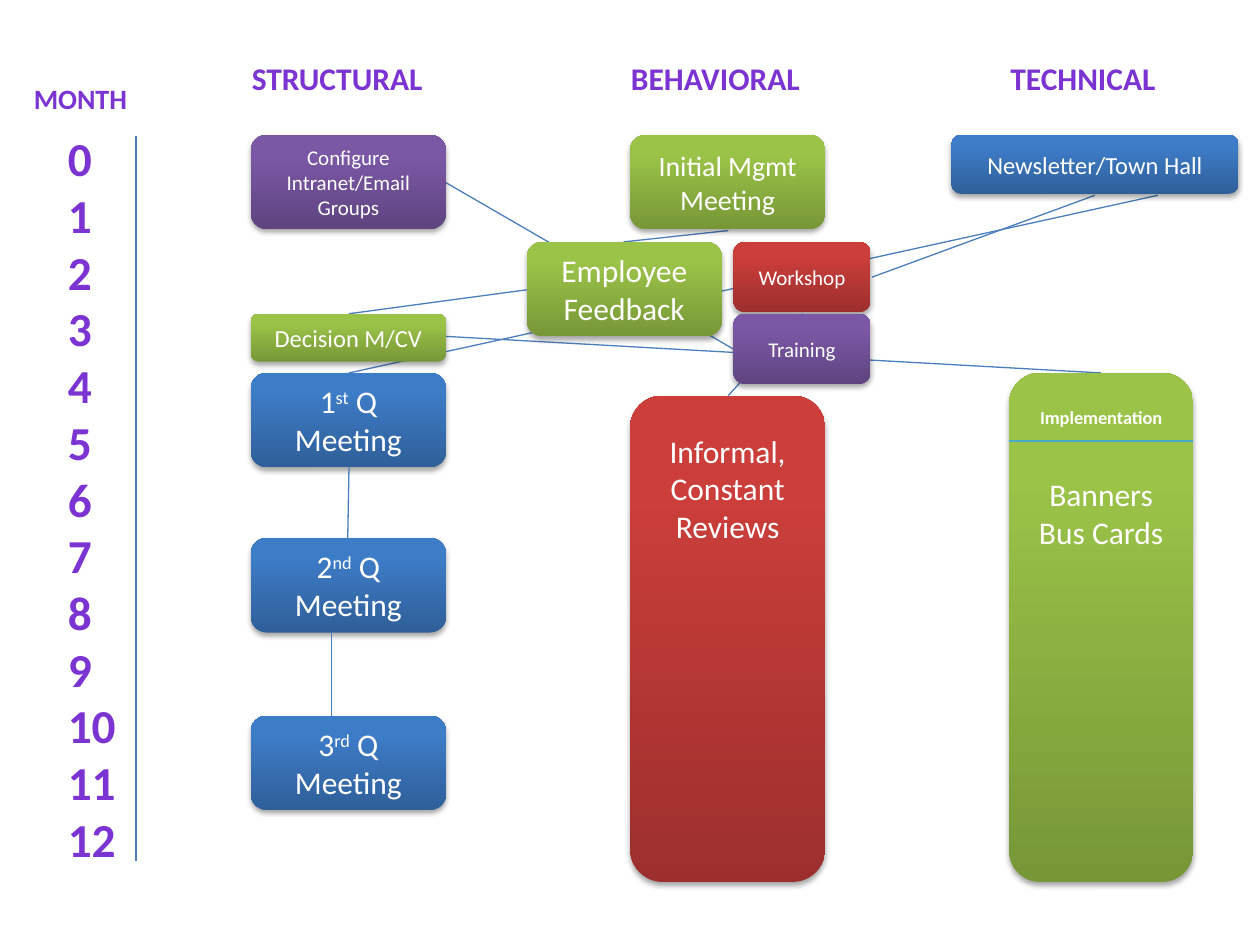
"""Build a month-by-month rollout timeline with three work streams."""
from dataclasses import dataclass
from typing import NamedTuple

from lxml import etree
from pptx import Presentation
from pptx.dml.color import RGBColor
from pptx.enum.shapes import MSO_CONNECTOR, MSO_SHAPE
from pptx.enum.text import MSO_ANCHOR, MSO_AUTO_SIZE, PP_ALIGN
from pptx.oxml import parse_xml
from pptx.oxml.ns import qn
from pptx.util import Inches, Pt

ROUNDED = MSO_SHAPE.ROUNDED_RECTANGLE
STRAIGHT = MSO_CONNECTOR.STRAIGHT
MIDDLE, TOP = MSO_ANCHOR.MIDDLE, MSO_ANCHOR.TOP
CENTER = PP_ALIGN.CENTER
FIT_SHAPE = MSO_AUTO_SIZE.SHAPE_TO_FIT_TEXT

FONT = "Calibri"
COLORS = {"label": "7B34D2", "text": "FFFFFF", "link": "4B7EBC", "divider": "46AAC5"}
GRADIENTS = {
    "purple": ("5F4480", "7B58A6"),
    "blue": ("2F5F99", "3D7CC7"),
    "green": ("779737", "9BC348"),
    "red": ("9C2F2D", "CB3E3A"),
}
SHADOW_XML = (
    '<a:outerShdw xmlns:a="http://schemas.openxmlformats.org/drawingml/2006/main" '
    'blurRad="40000" dist="23000" dir="5400000" rotWithShape="0">'
    '<a:srgbClr val="000000"><a:alpha val="35000"/></a:srgbClr></a:outerShdw>'
)

STRUCTURAL_X, BEHAVIORAL_X, TECHNICAL_X = 1.99, 5, 8.01
STEP_WIDTH, STEP_HEIGHT = 1.55, 0.75
QUARTER_TOP, QUARTER_PITCH = 2.96, 1.36


class Run(NamedTuple):
    text: str
    raised: bool = False


class Line(NamedTuple):
    runs: tuple[Run, ...]
    size: float
    bold: bool = False
    before: float = 0


@dataclass
class Step:
    left: float
    top: float
    color: str
    lines: list[Line]
    width: float = STEP_WIDTH
    height: float = STEP_HEIGHT
    top_margin: float | None = None


@dataclass
class Link:
    start: tuple[float, float]
    end: tuple[float, float]
    color: str = "link"
    weight: float = 0.75


@dataclass
class Label:
    left: float
    top: float
    width: float
    height: float
    lines: list[str]
    size: float
    pitch: float | None = None


def plain(text: str, size: float, bold: bool = False, before: float = 0) -> Line:
    """Return a line made of a single run."""
    return Line((Run(text),), size, bold, before)


def quarter(top: float, number: str, suffix: str) -> Step:
    """Return a quarterly meeting step with a raised ordinal suffix."""
    runs = (Run(number), Run(suffix, True), Run(" Q Meeting"))
    return Step(STRUCTURAL_X, top, "blue", [Line(runs, 18)])


LINKS = [
    Link((9.19, 1.55), (2.77, 2.96)),
    Link((3.54, 1.45), (5.82, 2.77)),
    Link((5.78, 1.83), (4.95, 1.92)),
    Link((4.18, 2.3), (2.77, 2.49)),
    Link((3.54, 2.67), (8.74, 2.96)),
    Link((8.69, 1.55), (6.92, 2.2)),
    Link((6.37, 2.49), (5.78, 3.14)),
    Link((1.08, 1.08), (1.08, 6.83), weight=1.5),
]
FRONT_LINKS = [
    Link((TECHNICAL_X, 3.5), (9.47, 3.5), "divider"),
    Link((2.77, 3.71), (2.76, 4.27)),
    Link((2.63, 5.02), (2.63, 5.68)),
]
LABELS = [
    Label(1.9, 0.42, 1.73, 0.4, ["STRUCTURAL"], 18),
    Label(4.91, 0.42, 1.73, 0.4, ["BEHAVIORAL"], 18),
    Label(7.92, 0.42, 1.55, 0.4, ["TECHNICAL"], 18),
    Label(0.17, 0.6, 1.28, 0.37, ["MONTH"], 16),
    Label(0.44, 0.98, 0.73, 6.23, [str(month) for month in range(13)], 27, 32.4),
]
STEPS = [
    Step(STRUCTURAL_X, 1.07, "purple", [plain("Configure Intranet/Email Groups", 12)]),
    quarter(QUARTER_TOP, "1", "st"),
    quarter(4.27, "2", "nd"),
    quarter(QUARTER_TOP + 2 * QUARTER_PITCH, "3", "rd"),
    Step(TECHNICAL_X, 2.96, "green",
         [plain("Implementation", 10.5, True), plain("Banners", 18, before=27), plain("Bus Cards", 18)],
         1.46, 4.04, 0.19),
    Step(BEHAVIORAL_X, 3.14, "red",
         [plain("Informal, Constant", 18), plain("Reviews", 18)], height=3.86, top_margin=0.21),
    Step(STRUCTURAL_X, 2.49, "green", [plain("Decision M/CV", 14)], height=0.38),
    Step(4.18, 1.92, "green", [plain("Employee Feedback", 18)]),
    Step(BEHAVIORAL_X, 1.07, "green", [plain("Initial Mgmt Meeting", 16)]),
    Step(7.55, 1.07, "blue", [plain("Newsletter/Town Hall", 14)], 2.28, 0.47),
    Step(5.82, 1.92, "red", [plain("Workshop", 12)], 1.09, 0.56),
    Step(5.82, 2.49, "purple", [plain("Training", 12)], 1.09, 0.56),
]


def add_run(paragraph, text: str, size: float, bold: bool, color: str, raised: bool = False) -> None:
    """Append one formatted run to a paragraph."""
    run = paragraph.add_run()
    run.text = text
    run.font.name, run.font.size, run.font.bold = FONT, Pt(size), bold
    run.font.color.rgb = RGBColor.from_string(COLORS[color])
    if raised:
        run._r.get_or_add_rPr().set("baseline", "30000")


def add_link(shapes, link: Link) -> None:
    """Draw a straight connector without a shadow."""
    connector = shapes.add_connector(STRAIGHT, *map(Inches, link.start + link.end))
    connector.line.color.rgb = RGBColor.from_string(COLORS[link.color])
    connector.line.width = Pt(link.weight)
    etree.SubElement(connector._element.spPr, qn("a:effectLst"))


def add_label(shapes, label: Label) -> None:
    """Draw a purple heading or the column of months."""
    bounds = (label.left, label.top, label.width, label.height)
    frame = shapes.add_textbox(*map(Inches, bounds)).text_frame
    frame.word_wrap, frame.auto_size = True, FIT_SHAPE
    for index, text in enumerate(label.lines):
        paragraph = frame.add_paragraph() if index else frame.paragraphs[0]
        if label.pitch:
            paragraph.line_spacing = Pt(label.pitch)
        add_run(paragraph, text, label.size, True, "label")


def add_step(shapes, step: Step) -> None:
    """Draw a rounded gradient step with its text."""
    bounds = (step.left, step.top, step.width, step.height)
    box = shapes.add_shape(ROUNDED, *map(Inches, bounds))
    box.fill.gradient()
    box.fill.gradient_angle = 90
    for stop, position, color in zip(box.fill.gradient_stops, (0, 0.8), GRADIENTS[step.color]):
        stop.position = position
        stop.color.rgb = RGBColor.from_string(color)
    box.line.fill.background()
    box.shadow.inherit = False
    box._element.spPr.find(qn("a:effectLst")).append(parse_xml(SHADOW_XML))
    frame = box.text_frame
    frame.word_wrap, frame.vertical_anchor = True, MIDDLE
    if step.top_margin is not None:
        frame.vertical_anchor, frame.margin_top = TOP, Inches(step.top_margin)
    for index, line in enumerate(step.lines):
        paragraph = frame.add_paragraph() if index else frame.paragraphs[0]
        paragraph.alignment, paragraph.space_before = CENTER, Pt(line.before)
        for run in line.runs:
            add_run(paragraph, run.text, line.size, line.bold, "text", run.raised)


def main() -> None:
    """Assemble and save the timeline."""
    deck = Presentation()
    deck.slide_width, deck.slide_height = Inches(10), Inches(7.5)
    shapes = deck.slides.add_slide(deck.slide_layouts[6]).shapes
    for draw, items in ((add_link, LINKS), (add_label, LABELS), (add_step, STEPS), (add_link, FRONT_LINKS)):
        for item in items:
            draw(shapes, item)
    deck.save("out.pptx")


if __name__ == "__main__":
    main()
